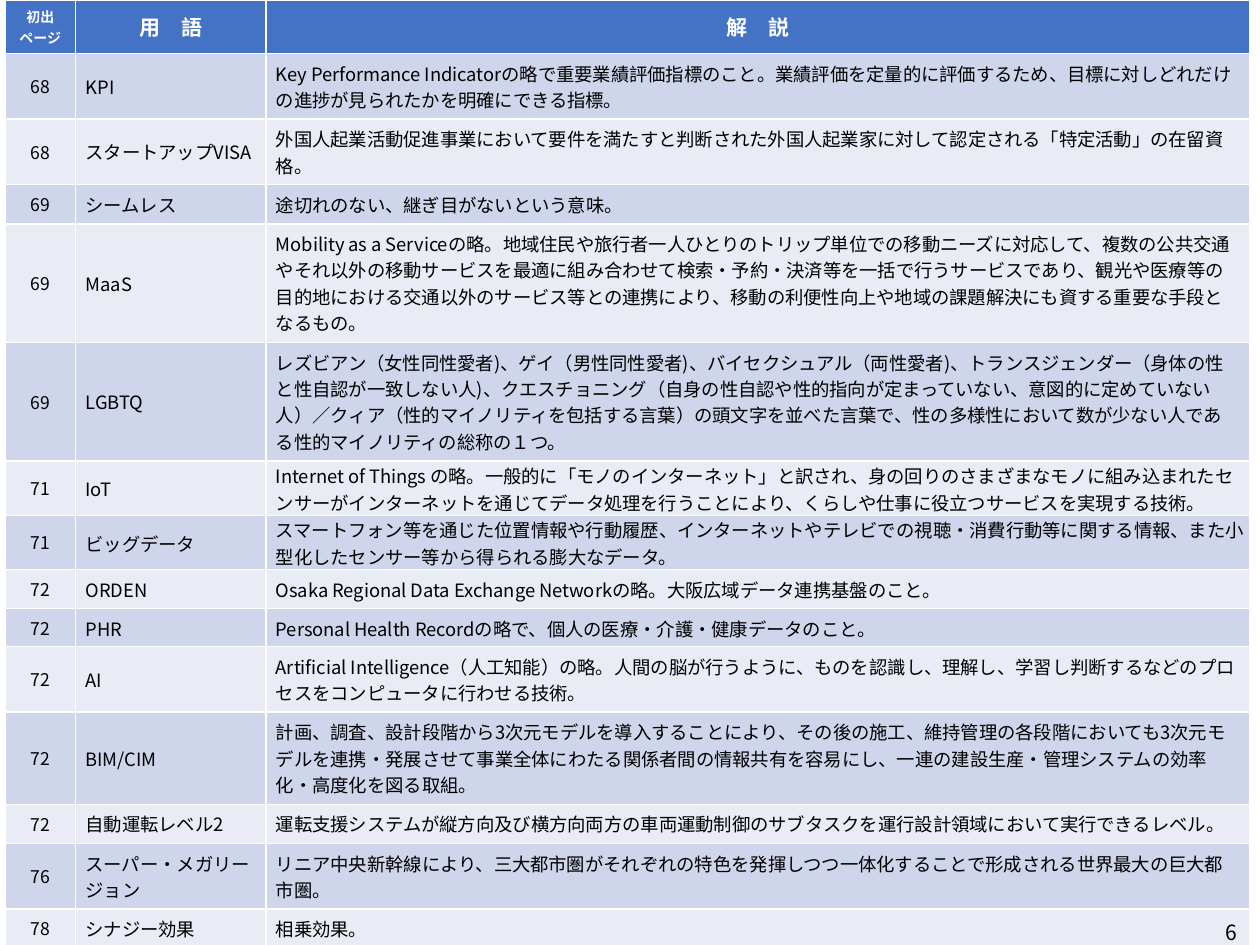
from pptx import Presentation
from pptx.dml.color import RGBColor
from pptx.enum.text import MSO_ANCHOR, PP_ALIGN
from pptx.oxml.ns import qn
from pptx.util import Inches, Pt
from lxml.etree import SubElement

FONT = "Noto Sans CJK JP"
COLORS = {
    "header": "4472C4",
    "odd": "CFD5EA",
    "even": "E9EBF5",
    "light": "FFFFFF",
    "text": "000000",
}
COLUMN_WIDTHS = [0.56, 1.51, 7.81]
HEADER_HEIGHT = 0.41
HEADINGS = [("初出\nページ", 8), ("用　語", 12), ("解　説", 12)]
STANDARD = (0.08, 0.05, 0.1, 0.05)
EVEN = (0.08, 0.05, 0.08, 0.05)
WIDE = (0.08, 0.01, 0.01, 0)
SLIM = (0.08, 0.01, 0.08, 0)
PAGE = (0.1, 0.05, 0.1, 0.05)
GLOSSARY = [
    ("68", "KPI", "Key Performance Indicatorの略で重要業績評価指標のこと。業績評価を定量的に評価するため、"
     "目標に対しどれだけの進捗が⾒られたかを明確にできる指標。", 0.5, EVEN),
    ("68", "スタートアップVISA", "外国人起業活動促進事業において要件を満たすと判断された外国人起業家に対して"
     "認定される「特定活動」の在留資格。", 0.5, STANDARD),
    ("69", "シームレス", "途切れのない、継ぎ目がないという意味。", 0.31, STANDARD),
    ("69", "MaaS", "Mobility as a Serviceの略。地域住民や旅行者一人ひとりのトリップ単位での移動ニーズに対応して、"
     "複数の公共交通やそれ以外の移動サービスを最適に組み合わせて検索・予約・決済等を一括で行うサービスであり、"
     "観光や医療等の目的地における交通以外のサービス等との連携により、"
     "移動の利便性向上や地域の課題解決にも資する重要な手段となるもの。", 0.9, STANDARD),
    ("69", "LGBTQ", "レズビアン（女性同性愛者)、ゲイ（男性同性愛者)、バイセクシュアル（両性愛者)、"
     "トランスジェンダー（身体の性と性自認が一致しない人)、"
     "クエスチョニング（自身の性自認や性的指向が定まっていない、意図的に定めていない人）／"
     "クィア（性的マイノリティを包括する言葉）の頭文字を並べた言葉で、"
     "性の多様性において数が少ない人である性的マイノリティの総称の１つ。", 0.9, STANDARD),
    ("71", "IoT", "Internet of Things の略。一般的に「モノのインターネット」と訳され、"
     "身の回りのさまざまなモノに組み込まれたセンサーがインターネットを通じてデータ処理を行うことにより、"
     "くらしや仕事に役立つサービスを実現する技術。", 0.4, WIDE),
    ("71", "ビッグデータ", "スマートフォン等を通じた位置情報や行動履歴、"
     "インターネットやテレビでの視聴・消費行動等に関する情報、"
     "また小型化したセンサー等から得られる膨大なデータ。", 0.4, WIDE),
    ("72", "ORDEN", "Osaka Regional Data Exchange Networkの略。大阪広域データ連携基盤のこと。", 0.31, STANDARD),
    ("72", "PHR", "Personal Health Recordの略で、個人の医療・介護・健康データのこと。", 0.3, SLIM),
    ("72", "AI", "Artificial Intelligence（人工知能）の略。人間の脳が行うように、ものを認識し、理解し、"
     "学習し判断するなどのプロセスをコンピュータに行わせる技術。", 0.5, STANDARD),
    ("72", "BIM/CIM", "計画、調査、設計段階から3次元モデルを導入することにより、"
     "その後の施工、維持管理の各段階においても3次元モデルを連携・発展させて"
     "事業全体にわたる関係者間の情報共有を容易にし、"
     "一連の建設生産・管理システムの効率化・高度化を図る取組。", 0.7, STANDARD),
    ("72", "自動運転レベル2", "運転支援システムが縦方向及び横方向両方の車両運動制御のサブタスクを"
     "運行設計領域において実行できるレベル。", 0.31, STANDARD),
    ("76", "スーパー・メガリージョン", "リニア中央新幹線により、三大都市圏がそれぞれの特色を発揮しつつ"
     "一体化することで形成される世界最大の巨大都市圏。", 0.5, EVEN),
    ("78", "シナジー効果", "相乗効果。", 0.3, SLIM),
]


def write_text(text_frame, text, size, color, alignment, bold=False):
    text_frame.text = text
    for paragraph in text_frame.paragraphs:
        paragraph.alignment = alignment
        font = paragraph.font
        font.name = FONT
        font.size = Pt(size)
        font.bold = bold
        font.color.rgb = RGBColor.from_string(COLORS[color])
        for latin in paragraph._p.iter(qn("a:latin")):
            SubElement(latin.getparent(), qn("a:ea"), typeface=FONT)


def fill_cell(cell, text, size, fill, color="text", alignment=PP_ALIGN.LEFT, bold=False, insets=PAGE):
    cell.fill.solid()
    cell.fill.fore_color.rgb = RGBColor.from_string(COLORS[fill])
    cell.vertical_anchor = MSO_ANCHOR.MIDDLE
    left, top, right, bottom = insets
    cell.margin_left, cell.margin_top = Inches(left), Inches(top)
    cell.margin_right, cell.margin_bottom = Inches(right), Inches(bottom)
    write_text(cell.text_frame, text, size, color, alignment, bold)


def add_glossary(slide):
    heights = [HEADER_HEIGHT] + [entry[3] for entry in GLOSSARY]
    table = slide.shapes.add_table(
        len(heights), len(COLUMN_WIDTHS), Inches(0.04), Inches(0),
        Inches(sum(COLUMN_WIDTHS)), Inches(sum(heights)),
    ).table
    for column, width in zip(table.columns, COLUMN_WIDTHS):
        column.width = Inches(width)
    for row, height in zip(table.rows, heights):
        row.height = Inches(height)
    for index, (heading, size) in enumerate(HEADINGS):
        fill_cell(table.cell(0, index), heading, size, "header", "light", PP_ALIGN.CENTER, True)
    for index, (page, term, explanation, _, insets) in enumerate(GLOSSARY, start=1):
        fill = "odd" if index % 2 else "even"
        fill_cell(table.cell(index, 0), page, 10, fill, alignment=PP_ALIGN.CENTER)
        fill_cell(table.cell(index, 1), term, 10.5, fill, insets=insets)
        fill_cell(table.cell(index, 2), explanation, 10.5, fill, insets=insets)


def add_page_number(slide, number):
    shape = slide.shapes.add_textbox(Inches(9.49), Inches(7.24), Inches(0.43), Inches(0.31))
    shape.text_frame.word_wrap = True
    shape.text_frame.vertical_anchor = MSO_ANCHOR.MIDDLE
    write_text(shape.text_frame, number, 12, "text", PP_ALIGN.RIGHT)


def main():
    presentation = Presentation()
    presentation.slide_width = Inches(10)
    presentation.slide_height = Inches(7.5)
    slide = presentation.slides.add_slide(presentation.slide_layouts[6])
    add_glossary(slide)
    add_page_number(slide, "6")
    presentation.save("out.pptx")


if __name__ == "__main__":
    main()
